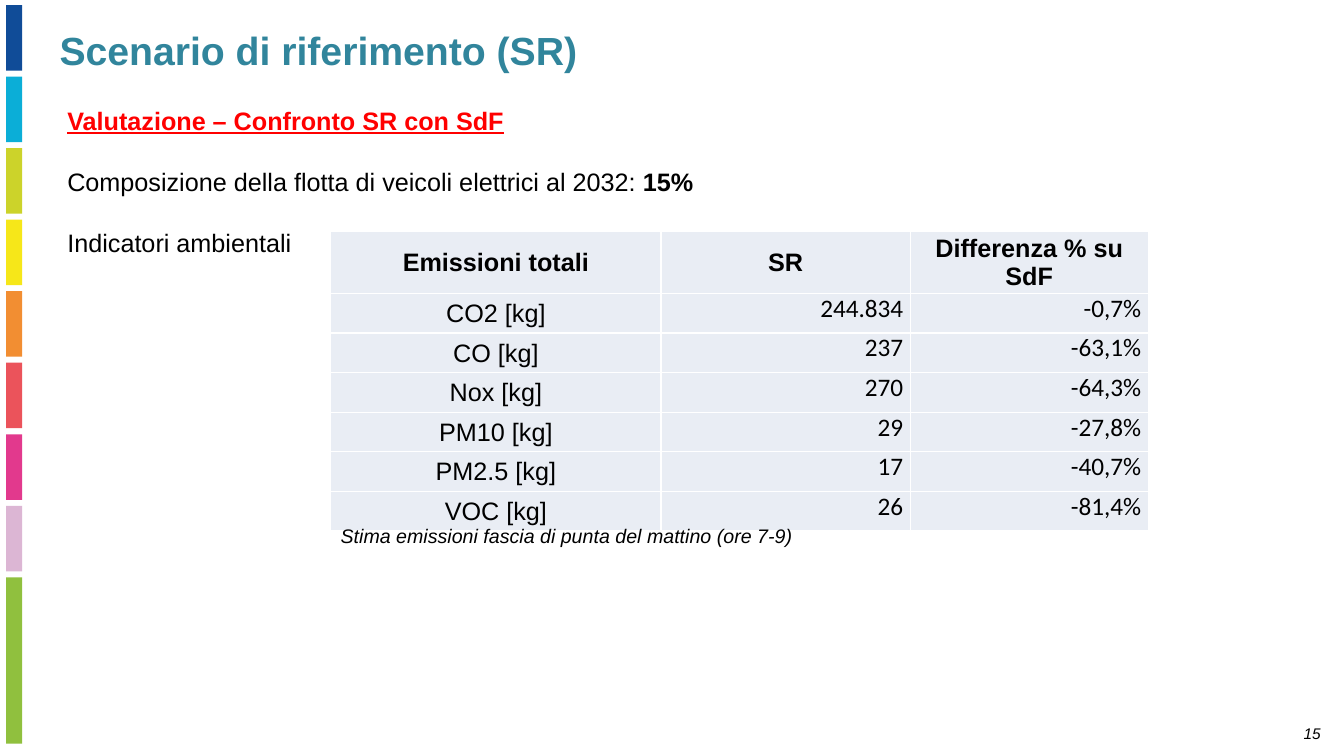
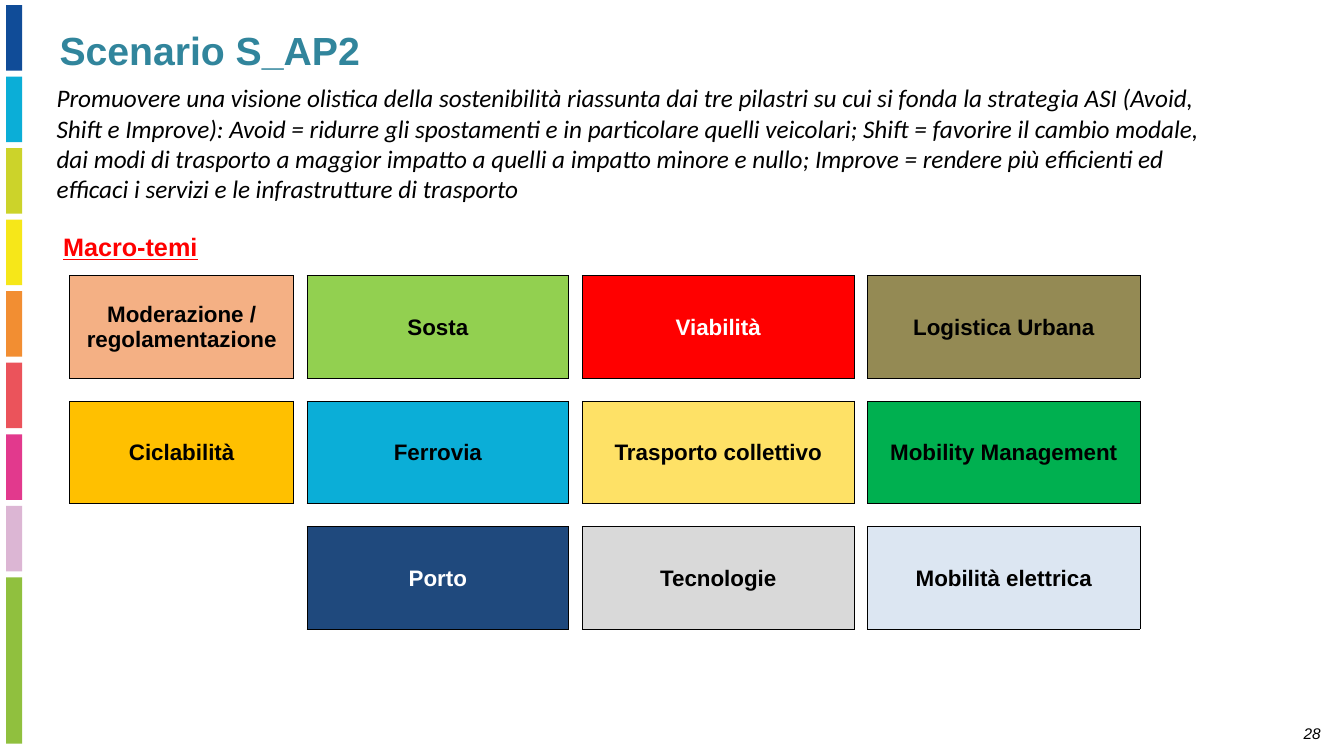
from dataclasses import dataclass
from itertools import accumulate
from typing import NamedTuple

from lxml.etree import SubElement
from pptx import Presentation
from pptx.dml.color import RGBColor
from pptx.enum.shapes import MSO_SHAPE
from pptx.enum.text import MSO_ANCHOR, PP_ALIGN
from pptx.oxml.ns import qn
from pptx.util import Pt


# Theme: colours, fonts and type sizes
@dataclass(frozen=True)
class Theme:
    black: str = "000000"
    white: str = "FFFFFF"
    title: str = "31859C"
    accent: str = "FF0000"
    cell: str = "E9EDF4"
    bands: tuple[str, ...] = ("104C98", "0BAED7", "CCD32A", "F6E719", "F28E32",
                              "EB535B", "E2398D", "DCB6D4", "90C03E")
    sans: str = "Arial"
    humanist: str = "Calibri"
    title_size: int = 28
    body_size: int = 18
    card_size: int = 16
    caption_size: int = 14
    number_size: int = 11


THEME = Theme()


class Area(NamedTuple):
    left: float
    top: float
    width: float
    height: float

    def lengths(self) -> list[Pt]:
        return [Pt(value) for value in self]


class Style(NamedTuple):
    size: int
    color: str = THEME.black
    font: str = THEME.sans
    bold: bool = False
    italic: bool = False
    underline: bool = False


class Span(NamedTuple):
    text: str
    style: Style


class Card(NamedTuple):
    text: str
    fill: str
    color: str = THEME.black


class CellLayout(NamedTuple):
    align: PP_ALIGN
    anchor: MSO_ANCHOR
    insets: tuple[float, float, float, float]
    space_after: float = 0


BODY = Style(THEME.body_size)
STRONG = BODY._replace(bold=True)
HEADING = STRONG._replace(color=THEME.accent, underline=True)
FIGURE = BODY._replace(font=THEME.humanist)
INTRO = FIGURE._replace(italic=True)
CAPTION = Style(THEME.caption_size, italic=True)
TITLE = Style(THEME.title_size, THEME.title, bold=True)
NUMBER = Style(THEME.number_size, italic=True)

CENTERED = CellLayout(PP_ALIGN.CENTER, MSO_ANCHOR.MIDDLE, (0.72, 0.72, 0.72, 0))
NUMERIC = CellLayout(PP_ALIGN.RIGHT, MSO_ANCHOR.TOP, (5, 0, 5, 0), 6)


# Text
def add_span(para, span: Span) -> None:
    run = para.add_run()
    run.text = span.text
    style = span.style
    formats = {"size": Pt(style.size), "name": style.font, "bold": style.bold,
               "italic": style.italic, "underline": style.underline}
    for name, value in formats.items():
        setattr(run.font, name, value)
    run.font.color.rgb = RGBColor.from_string(style.color)


def add_text(page, area: Area, *spans: Span, align: PP_ALIGN = PP_ALIGN.LEFT) -> None:
    box = page.shapes.add_textbox(*area.lengths())
    box.text_frame.word_wrap = True
    para = box.text_frame.paragraphs[0]
    para.alignment = align
    for span in spans:
        add_span(para, span)


# Tables
def add_grid(page, left: float, top: float, widths: list[float], heights: list[float]):
    area = Area(left, top, sum(widths), sum(heights))
    table = page.shapes.add_table(len(heights), len(widths), *area.lengths()).table
    table.first_row = table.horz_banding = False
    for column, width in zip(table.columns, widths):
        column.width = Pt(width)
    for row, height in zip(table.rows, heights):
        row.height = Pt(height)
    return table


def fill_cell(cell, span: Span, layout: CellLayout, fill: str,
              border: str, border_width: float) -> None:
    properties = cell._tc.get_or_add_tcPr()
    for side in ("lnL", "lnR", "lnT", "lnB"):
        line = SubElement(properties, qn(f"a:{side}"), w=str(Pt(border_width)))
        SubElement(SubElement(line, qn("a:solidFill")), qn("a:srgbClr"), val=border)
    cell.fill.solid()
    cell.fill.fore_color.rgb = RGBColor.from_string(fill)
    cell.vertical_anchor = layout.anchor
    sides = ("margin_left", "margin_top", "margin_right", "margin_bottom")
    for name, inset in zip(sides, layout.insets):
        setattr(cell, name, Pt(inset))
    para = cell.text_frame.paragraphs[0]
    para.alignment = layout.align
    para.space_after = Pt(layout.space_after)
    add_span(para, span)


# Shared frame: colour bands, page number and title
def add_page(deck, title: str, number: int):
    page = deck.slides.add_slide(deck.slide_layouts[6])
    last = len(THEME.bands) - 1
    for index, color in enumerate(THEME.bands):
        area = Area(4.4, 3.6 + 51.1 * index, 11.5, 118.8 if index == last else 46.8)
        band = page.shapes.add_shape(MSO_SHAPE.RECTANGLE, *area.lengths())
        band.shadow.inherit = False
        band.fill.solid()
        band.fill.fore_color.rgb = RGBColor.from_string(color)
        band.line.fill.background()
    add_text(page, Area(865.5, 514, 85, 21), Span(str(number), NUMBER),
             align=PP_ALIGN.RIGHT)
    add_text(page, Area(35.5, 15.5, 847.5, 41), Span(title, TITLE))
    return page


# Emissions slide
EMISSIONS = (
    ("Emissioni totali", "SR", "Differenza % su SdF"),
    ("CO2 [kg]", "244.834", "-0,7%"),
    ("CO [kg]", "237", "-63,1%"),
    ("Nox [kg]", "270", "-64,3%"),
    ("PM10 [kg]", "29", "-27,8%"),
    ("PM2.5 [kg]", "17", "-40,7%"),
    ("VOC [kg]", "26", "-81,4%"),
)


def build_emissions(deck) -> None:
    page = add_page(deck, "Scenario di riferimento (SR)", 15)
    add_text(page, Area(41, 71.5, 900, 29),
             Span("Valutazione – Confronto SR con SdF", HEADING))
    add_text(page, Area(41, 115.2, 546, 29),
             Span("Composizione della flotta di veicoli elettrici al 2032: ", BODY),
             Span("15%", STRONG))
    add_text(page, Area(41, 159, 190, 29), Span("Indicatori ambientali", BODY))

    table = add_grid(page, 236.2, 165.6, [236, 178, 170], [28.3] * len(EMISSIONS))
    for row, values in enumerate(EMISSIONS):
        for column, text in enumerate(values):
            numeric = row > 0 and column > 0
            style = STRONG if row == 0 else FIGURE if numeric else BODY
            fill_cell(table.cell(row, column), Span(text, style),
                      NUMERIC if numeric else CENTERED, THEME.cell, THEME.white, 1)

    add_text(page, Area(236.2, 370.8, 480, 24.5),
             Span("Stima emissioni fascia di punta del mattino (ore 7-9)", CAPTION))


# Macro-themes slide
CARDS = (
    (Card("Moderazione / regolamentazione", "F4B084"), Card("Sosta", "92D050"),
     Card("Viabilità", "FF0000", THEME.white), Card("Logistica Urbana", "948A54")),
    (Card("Ciclabilità", "FFC000"), Card("Ferrovia", "0BAED7"),
     Card("Trasporto collettivo", "FEE166"), Card("Mobility Management", "00B050")),
    (None, Card("Porto", "1F497D", THEME.white),
     Card("Tecnologie", "D9D9D9"), Card("Mobilità elettrica", "DCE6F2")),
)
CARD_WIDTHS = (160, 187, 194.5, 194.5)
CARD_GAP = 9.5
CARD_HEIGHT = 73
CARD_PITCH = 89.6


def build_themes(deck) -> None:
    page = add_page(deck, "Scenario S_AP2", 28)
    add_text(page, Area(33.3, 55.5, 838, 94), Span(
        "Promuovere una visione olistica della sostenibilità riassunta dai tre pilastri "
        "su cui si fonda la strategia ASI (Avoid, Shift e Improve): Avoid = ridurre gli "
        "spostamenti e in particolare quelli veicolari; Shift = favorire il cambio "
        "modale, dai modi di trasporto a maggior impatto a quelli a impatto minore e "
        "nullo; Improve = rendere più efficienti ed efficaci i servizi e le "
        "infrastrutture di trasporto", INTRO))
    add_text(page, Area(38, 162, 900, 29), Span("Macro-temi", HEADING))

    lefts = list(accumulate((width + CARD_GAP for width in CARD_WIDTHS), initial=49.8))
    for row, cards in enumerate(CARDS):
        for left, width, card in zip(lefts, CARD_WIDTHS, cards):
            if card is None:
                continue
            table = add_grid(page, left, 197 + CARD_PITCH * row, [width], [CARD_HEIGHT])
            style = Style(THEME.card_size, card.color, bold=True)
            fill_cell(table.cell(0, 0), Span(card.text, style), CENTERED,
                      card.fill, THEME.black, 0.5)


def main() -> None:
    deck = Presentation()
    deck.slide_width, deck.slide_height = Pt(960), Pt(540)
    build_emissions(deck)
    build_themes(deck)
    deck.save("out.pptx")


if __name__ == "__main__":
    main()
